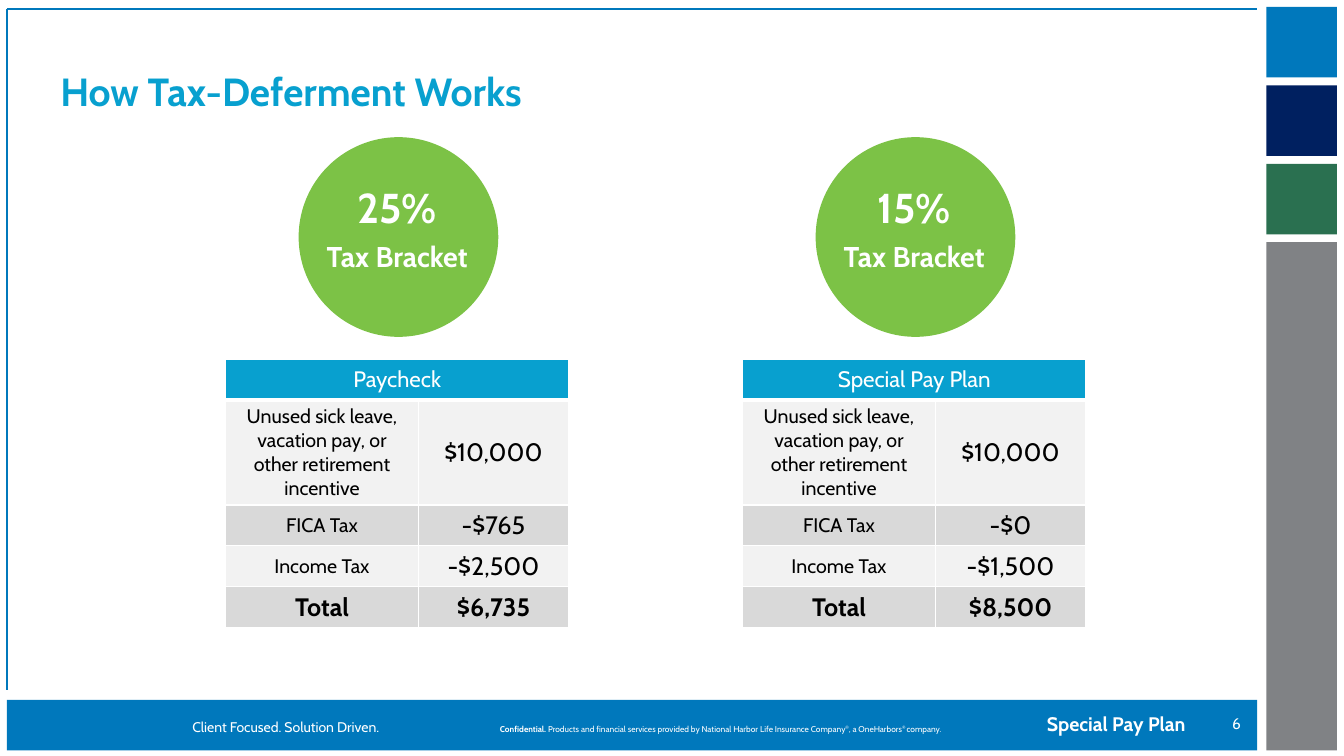
"""Build the slide that compares a paycheck with a special pay plan."""
from dataclasses import dataclass

from lxml import etree
from pptx import Presentation
from pptx.dml.color import RGBColor
from pptx.enum.shapes import MSO_CONNECTOR, MSO_SHAPE
from pptx.enum.text import MSO_ANCHOR, PP_ALIGN
from pptx.oxml.ns import qn
from pptx.util import Pt

RECTANGLE, OVAL = MSO_SHAPE.RECTANGLE, MSO_SHAPE.OVAL
STRAIGHT = MSO_CONNECTOR.STRAIGHT
LEFT, CENTER, RIGHT = PP_ALIGN.LEFT, PP_ALIGN.CENTER, PP_ALIGN.RIGHT
TOP, MIDDLE, BOTTOM = MSO_ANCHOR.TOP, MSO_ANCHOR.MIDDLE, MSO_ANCHOR.BOTTOM

FONT = "Cabin"
COLORS = {
    "blue": "0078BC",
    "navy": "002060",
    "forest": "2A7050",
    "gray": "808285",
    "lime": "7CC246",
    "sky": "08A0CF",
    "light": "F2F2F2",
    "dark": "D9D9D9",
    "white": "FFFFFF",
    "black": "000000",
}
COLUMN_WIDTHS = (137.5, 107.5)
ROW_HEIGHTS = (29.2, 75, 29.2, 29.2, 29.2)


@dataclass
class Block:
    """A filled shape without outline."""
    left: float
    top: float
    width: float
    height: float
    color: str
    kind: int = RECTANGLE


@dataclass
class Line:
    """One paragraph of uniform text."""
    text: str
    size: float
    color: str = "white"
    bold: bool = False
    align: int = LEFT
    spacing: float = 1.0
    before: float = 0


@dataclass
class Label:
    """A text box with its lines."""
    left: float
    top: float
    width: float
    height: float
    lines: list
    anchor: int = TOP


@dataclass
class Plan:
    """A tax bracket and the table under it."""
    left: float
    bracket: str
    name: str
    amounts: tuple


BLOCKS = [Block(5, 500, 893, 36, "blue")] + [
    Block(904.5, 5 + 56 * index, 50.4, height, color)
    for index, (color, height) in enumerate(
        [("blue", 50.4), ("navy", 50.4), ("forest", 50.4), ("gray", 363)])
]
FRAME_ENDS = ((898, 6.5), (5, 493))
LABELS = [
    Label(130.3, 509.8, 166.3, 19.4, [Line("Client Focused. Solution Driven.", 10)]),
    Label(399.6, 504.7, 454.3, 24.5,
          [Line("Special Pay Plan", 14, bold=True, align=RIGHT)], MIDDLE),
    Label(850.3, 502.6, 43.2, 28.8, [Line("6", 11, align=RIGHT)], MIDDLE),
    Label(36, 28, 828, 57.6,
          [Line("How Tax-Deferment Works", 28, "sky", True, spacing=0.9)], BOTTOM),
]
NOTICE = (
    ("Confidential. ", True, False),
    ("Products and financial services provided by National Harbor Life Insurance Company",
     False, False),
    ("®", False, True),
    (", a OneHarbors", False, False),
    ("® ", False, True),
    ("company.", False, False),
)
ROW_NAMES = (
    ("Unused sick leave, vacation pay, or other retirement incentive", 14),
    ("FICA Tax", 14),
    ("Income Tax", 14),
    ("Total", 18),
)
PLANS = [
    Plan(161.3, "25%", "Paycheck", ("$10,000", "-$765", "-$2,500", "$6,735")),
    Plan(530.6, "15%", "Special Pay Plan", ("$10,000", "-$0", "-$1,500", "$8,500")),
]


def rgb(name: str) -> RGBColor:
    """Return the named color."""
    return RGBColor.from_string(COLORS[name])


def style_paragraph(para, line: Line) -> None:
    """Write a line into a paragraph and style it."""
    para.text = line.text
    para.alignment = line.align
    para.line_spacing = line.spacing
    para.space_before = Pt(line.before)
    font = para.font
    font.name, font.size, font.bold = FONT, Pt(line.size), line.bold
    font.color.rgb = rgb(line.color)


def add_block(page, block: Block) -> None:
    """Draw a filled shape."""
    shape = page.shapes.add_shape(block.kind, Pt(block.left), Pt(block.top),
                                  Pt(block.width), Pt(block.height))
    shape.shadow.inherit = False
    shape.fill.solid()
    shape.fill.fore_color.rgb = rgb(block.color)
    shape.line.fill.background()


def add_label(page, label: Label):
    """Draw a text box and return its frame."""
    box = page.shapes.add_textbox(Pt(label.left), Pt(label.top),
                                  Pt(label.width), Pt(label.height))
    frame = box.text_frame
    frame.word_wrap = True
    frame.vertical_anchor = label.anchor
    for index, line in enumerate(label.lines):
        para = frame.add_paragraph() if index else frame.paragraphs[0]
        style_paragraph(para, line)
    return frame


def add_frame_line(page, end: tuple) -> None:
    """Draw a border line from the top left corner."""
    line = page.shapes.add_connector(STRAIGHT, Pt(5), Pt(6.5), Pt(end[0]), Pt(end[1]))
    line.line.color.rgb = rgb("blue")
    line.line.width = Pt(1)
    etree.SubElement(line._element.spPr, qn("a:effectLst"))


def add_notice(page) -> None:
    """Draw the confidentiality notice with raised marks."""
    frame = add_label(page, Label(326.9, 513.4, 375.8, 14.4, [Line("", 6, align=CENTER)]))
    for text, bold, raised in NOTICE:
        span = frame.paragraphs[0].add_run()
        span.text = text
        span.font.name, span.font.size, span.font.bold = FONT, Pt(6), bold
        span.font.color.rgb = rgb("white")
        if raised:
            span.font._element.set("baseline", "30000")


def style_cell(cell, line: Line, fill: str, bottom: float) -> None:
    """Give a cell white borders, a fill and centered text."""
    properties = cell._tc.get_or_add_tcPr()
    for side, width in (("L", 1), ("R", 1), ("T", 1), ("B", bottom)):
        border = etree.SubElement(properties, qn(f"a:ln{side}"), w=str(Pt(width)))
        solid = etree.SubElement(border, qn("a:solidFill"))
        etree.SubElement(solid, qn("a:srgbClr"), val=COLORS["white"])
    cell.fill.solid()
    cell.fill.fore_color.rgb = rgb(fill)
    cell.vertical_anchor = MIDDLE
    style_paragraph(cell.text_frame.paragraphs[0], line)


def add_plan(page, plan: Plan) -> None:
    """Draw a bracket circle and its table."""
    add_block(page, Block(plan.left + 52, 98, 142.6, 142.6, "lime", OVAL))
    add_label(page, Label(plan.left + 50.4, 133.2, 144, 67.7, [
        Line(plan.bracket, 29.8, bold=True, align=CENTER, spacing=0.8),
        Line("Tax Bracket", 20.4, bold=True, align=CENTER, spacing=0.8, before=10),
    ]))
    table = page.shapes.add_table(len(ROW_HEIGHTS), len(COLUMN_WIDTHS), Pt(plan.left),
                                  Pt(256.5), Pt(sum(COLUMN_WIDTHS)),
                                  Pt(sum(ROW_HEIGHTS))).table
    table.first_row = table.horz_banding = False
    for column, width in zip(table.columns, COLUMN_WIDTHS):
        column.width = Pt(width)
    for row, height in zip(table.rows, ROW_HEIGHTS):
        row.height = Pt(height)
    for column, text in enumerate((plan.name, "")):
        style_cell(table.cell(0, column), Line(text, 16, align=CENTER), "sky", 3)
    table.cell(0, 0).merge(table.cell(0, 1))
    for row, ((name, size), amount) in enumerate(zip(ROW_NAMES, plan.amounts), 1):
        fill = "light" if row % 2 else "dark"
        for column, (text, points) in enumerate(((name, size), (amount, 18))):
            line = Line(text, points, "black", name == "Total", CENTER)
            style_cell(table.cell(row, column), line, fill, 1)


def main() -> None:
    """Build and save the deck."""
    deck = Presentation()
    deck.slide_width, deck.slide_height = Pt(960), Pt(540)
    page = deck.slides.add_slide(deck.slide_layouts[6])
    for block in BLOCKS:
        add_block(page, block)
    for end in FRAME_ENDS:
        add_frame_line(page, end)
    for label in LABELS:
        add_label(page, label)
    add_notice(page)
    for plan in PLANS:
        add_plan(page, plan)
    deck.save("out.pptx")


if __name__ == "__main__":
    main()
